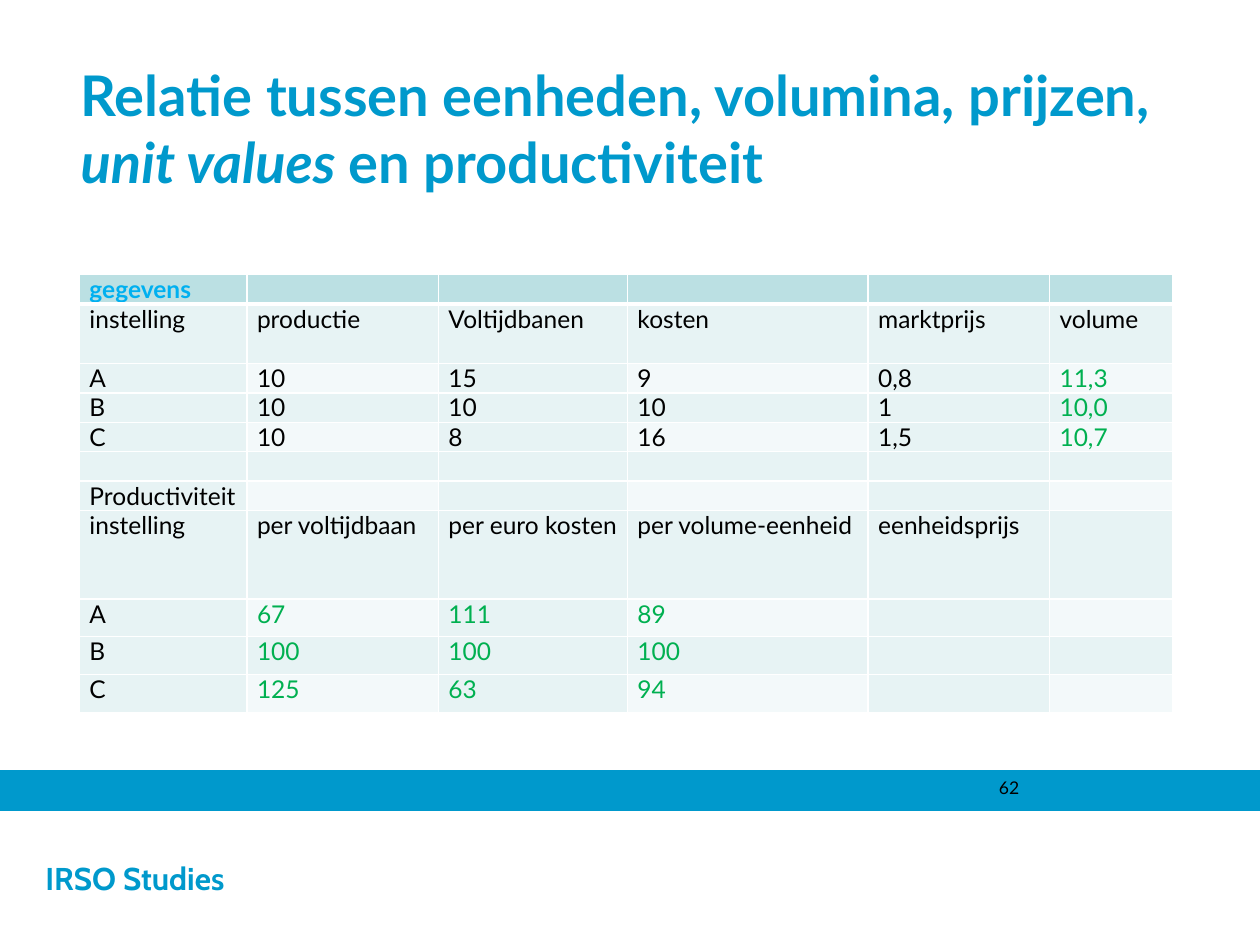
from pptx import Presentation
from pptx import util as u
from pptx.dml.color import RGBColor
from pptx.enum import shapes, text
from pptx.oxml.ns import qn
from lxml import etree

BLUE = RGBColor(0x00, 0x99, 0xCC)
SKY = RGBColor(0x00, 0xB0, 0xF0)
GREEN = RGBColor(0x00, 0xB0, 0x50)
BLACK = RGBColor(0x00, 0x00, 0x00)
WHITE = RGBColor(0xFF, 0xFF, 0xFF)
HEADER = RGBColor(0xBB, 0xE0, 0xE3)
BAND = RGBColor(0xE7, 0xF3, 0xF4)
PALE = RGBColor(0xF3, 0xF9, 0xFA)

ROWS = [
    ["gegevens"],
    ["instelling", "productie", "Voltijdbanen", "kosten", "marktprijs", "volume"],
    ["A", "10", "15", "9", "0,8", "11,3"],
    ["B", "10", "10", "10", "1", "10,0"],
    ["C", "10", "8", "16", "1,5", "10,7"],
    [],
    ["Productiviteit"],
    ["instelling", "per voltijdbaan", "per euro kosten", "per volume-eenheid", "eenheidsprijs"],
    ["A", "67", "111", "89"],
    ["B", "100", "100", "100"],
    ["C", "125", "63", "94"],
]
COL_WIDTHS = [13.3, 15.2, 15, 19.1, 14.4, 9.8]
ROW_HEIGHTS = [2.3, 4.7, 2.3, 2.3, 2.3, 2.3, 2.3, 7, 3, 3, 3]
VOLUME_COL = 5
FIRST_RESULT_ROW = 8


class Deck:
    FONT = "Lato"
    COLS, GRID_ROWS = 100, 75

    def __init__(self):
        self.prs = Presentation()
        self.prs.slide_width, self.prs.slide_height = u.Inches(10), u.Inches(7.5)
        self.s = self.prs.slides.add_slide(self.prs.slide_layouts[5])

    def x(self, cols):
        return round(self.prs.slide_width * cols / self.COLS)

    def y(self, rows):
        return round(self.prs.slide_height * rows / self.GRID_ROWS)

    def box(self, left, top, width, height):
        return self.x(left), self.y(top), self.x(width), self.y(height)

    def run(self, p, words, size, color, font=FONT, bold=False, italic=False):
        r = p.add_run()
        r.text = words
        f = r.font
        f.name, f.size, f.bold, f.italic = font, u.Pt(size), bold, italic
        f.color.rgb = color

    def title(self, box, parts):
        sp = self.s.shapes.title
        sp.left, sp.top, sp.width, sp.height = self.box(*box)
        tf = sp.text_frame
        tf.word_wrap = True
        tf.auto_size = text.MSO_AUTO_SIZE.NONE
        tf.vertical_anchor = text.MSO_ANCHOR.TOP
        p = tf.paragraphs[0]
        p.alignment = text.PP_ALIGN.LEFT
        for words, italic in parts:
            self.run(p, words, 32, BLUE, bold=True, italic=italic)

    def bar(self, box, fill, line=None):
        sp = self.s.shapes.add_shape(shapes.MSO_SHAPE.RECTANGLE, *self.box(*box))
        sp.shadow.inherit = False
        sp.fill.solid()
        sp.fill.fore_color.rgb = fill
        if line is None:
            sp.line.fill.background()
        else:
            sp.line.color.rgb = line
            sp.line.width = u.Pt(0.75)
        return sp

    def label(self, sp, words, indent, **style):
        tf = sp.text_frame
        tf.word_wrap = True
        tf.margin_left = self.x(indent)
        p = tf.paragraphs[0]
        p.alignment = text.PP_ALIGN.LEFT
        self.run(p, words, **style)

    def text_box(self, box, words, **style):
        sp = self.s.shapes.add_textbox(*self.box(*box))
        self.label(sp, words, 1, **style)

    def borders(self, cell, widths):
        tcPr = cell._tc.get_or_add_tcPr()
        for i, (side, width) in enumerate(widths.items()):
            ln = etree.Element(qn("a:" + side), w=str(u.Pt(width)))
            fill = etree.SubElement(ln, qn("a:solidFill"))
            etree.SubElement(fill, qn("a:srgbClr"), val=str(WHITE))
            tcPr.insert(i, ln)

    def cell(self, cell, words, fill, color, bold, widths):
        cell.fill.solid()
        cell.fill.fore_color.rgb = fill
        cell.margin_left = cell.margin_right = self.x(0.8)
        cell.margin_top = cell.margin_bottom = 0
        p = cell.text_frame.paragraphs[0]
        if words:
            self.run(p, words, 14, color, bold=bold)
        else:
            etree.SubElement(p._p, qn("a:endParaRPr"), sz="1400")
        self.borders(cell, widths)

    def table(self, left, top, col_widths, row_heights, rows):
        box = self.box(left, top, sum(col_widths), sum(row_heights))
        table = self.s.shapes.add_table(len(rows), len(col_widths), *box).table
        for col, width in zip(table.columns, col_widths):
            col.width = self.x(width)
        for i, (row, height) in enumerate(zip(table.rows, row_heights)):
            row.height = self.y(height)
            for j, cell in enumerate(row.cells):
                words = rows[i][j] if j < len(rows[i]) else ""
                head = i == 0
                fill = HEADER if head else PALE if i % 2 == 0 and j % 2 else BAND
                result = (i > 1 and j == VOLUME_COL) or (i >= FIRST_RESULT_ROW and j > 0)
                color = SKY if head else GREEN if result else BLACK
                widths = {"lnL": 1, "lnR": 1, "lnT": 3 if i == 1 else 1, "lnB": 3 if head else 1}
                self.cell(cell, words, fill, color, head, widths)


def main():
    d = Deck()
    footer = d.bar((0, 64.4, 100, 10.6), WHITE)
    d.label(footer, "IRSO Studies", 3.6, size=18, color=BLUE, font="Cabin", bold=True)
    d.bar((0, 61.2, 100, 3.1), BLUE, BLUE)
    d.title((5.4, 4.3, 89.4, 9.1), [
        ("Relatie tussen eenheden, volumina, prijzen, ", False),
        ("unit values ", True),
        ("en productiviteit", False),
    ])
    d.text_box((78.3, 61.2, 20.8, 2.5), "62", size=10, color=BLACK)
    d.table(6.3, 21.8, COL_WIDTHS, ROW_HEIGHTS, ROWS)
    d.prs.save("out.pptx")


if __name__ == "__main__":
    main()
